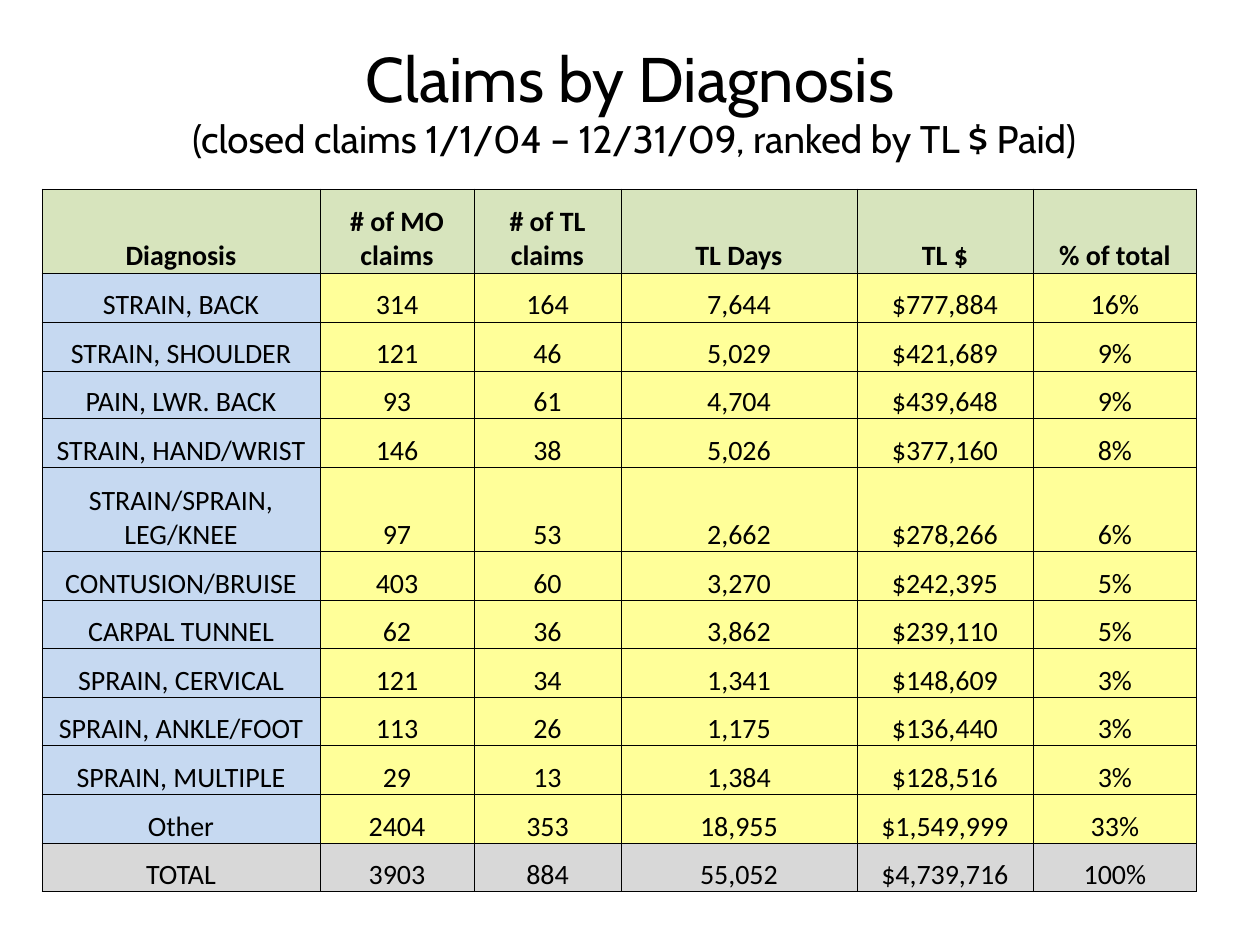
"""Build the slide with the table of claims by diagnosis."""
from dataclasses import dataclass
from itertools import pairwise

from lxml import etree
from pptx import Presentation
from pptx.dml.color import RGBColor
from pptx.enum import text
from pptx.oxml import ns
from pptx.util import Pt

PX = 914400 // 126


@dataclass(frozen=True)
class Theme:
    ink: str = "000000"
    header: str = "D7E4BD"
    diagnosis: str = "C6D9F1"
    figure: str = "FFFF99"
    total: str = "D8D8D8"
    title_font: str = "Cabin"
    table_font: str = "Calibri"
    title_size: int = 36
    subtitle_size: int = 22
    table_size: int = 16
    border: float = 0.5


theme = Theme()


def add_span(para, wording, font, size, bold=False):
    span = para.add_run()
    span.text = wording
    span.font.name = font
    span.font.size = Pt(size)
    span.font.bold = bold
    span.font.color.rgb = RGBColor.from_string(theme.ink)


def add_borders(cell):
    properties = cell._tc.get_or_add_tcPr()
    for side in ("a:lnL", "a:lnR", "a:lnT", "a:lnB"):
        line = etree.SubElement(properties, ns.qn(side), w=str(Pt(theme.border)))
        fill = etree.SubElement(line, ns.qn("a:solidFill"))
        etree.SubElement(fill, ns.qn("a:srgbClr"), val=theme.ink)


claims = [
    ("Diagnosis", "# of MO claims", "# of TL claims", "TL Days", "TL $", "% of total"),
    ("STRAIN, BACK", "314", "164", "7,644", "$777,884", "16%"),
    ("STRAIN, SHOULDER", "121", "46", "5,029", "$421,689", "9%"),
    ("PAIN, LWR. BACK", "93", "61", "4,704", "$439,648", "9%"),
    ("STRAIN, HAND/WRIST", "146", "38", "5,026", "$377,160", "8%"),
    ("STRAIN/SPRAIN, LEG/KNEE", "97", "53", "2,662", "$278,266", "6%"),
    ("CONTUSION/BRUISE", "403", "60", "3,270", "$242,395", "5%"),
    ("CARPAL TUNNEL", "62", "36", "3,862", "$239,110", "5%"),
    ("SPRAIN, CERVICAL", "121", "34", "1,341", "$148,609", "3%"),
    ("SPRAIN, ANKLE/FOOT", "113", "26", "1,175", "$136,440", "3%"),
    ("SPRAIN, MULTIPLE", "29", "13", "1,384", "$128,516", "3%"),
    ("Other", "2404", "353", "18,955", "$1,549,999", "33%"),
    ("TOTAL", "3903", "884", "55,052", "$4,739,716", "100%"),
]
column_edges = [42, 320, 474, 621, 857, 1033, 1197]
row_edges = [189, 273, 322, 371, 419, 468, 552, 601, 649, 698, 746, 795, 844, 892]

deck = Presentation()
deck.slide_width = 1260 * PX
deck.slide_height = 945 * PX
page = deck.slides.add_slide(deck.slide_layouts[5])

title = page.shapes.title
title.left, title.top, title.width, title.height = (n * PX for n in (63, 21, 1134, 158))
title.text_frame.auto_size = text.MSO_AUTO_SIZE.NONE
title.text_frame.vertical_anchor = text.MSO_ANCHOR.MIDDLE
heading = title.text_frame.paragraphs[0]
heading.alignment = text.PP_ALIGN.CENTER
add_span(heading, "Claims by Diagnosis", theme.title_font, theme.title_size)
heading.add_line_break()
add_span(heading, " (closed claims 1/1/04 – 12/31/09, ranked by TL $ Paid)",
         theme.title_font, theme.subtitle_size)

table = page.shapes.add_table(
    len(claims), len(claims[0]), column_edges[0] * PX, row_edges[0] * PX,
    (column_edges[-1] - column_edges[0]) * PX, (row_edges[-1] - row_edges[0]) * PX,
).table
table.first_row = False
table.horz_banding = False
for column, (left, right) in zip(table.columns, pairwise(column_edges)):
    column.width = (right - left) * PX
for row, (top, bottom) in zip(table.rows, pairwise(row_edges)):
    row.height = (bottom - top) * PX

band_fills = {0: theme.header, len(claims) - 1: theme.total}
for row_index, record in enumerate(claims):
    for column_index, wording in enumerate(record):
        cell = table.cell(row_index, column_index)
        cell.margin_left = cell.margin_right = cell.margin_top = cell.margin_bottom = 0
        cell.vertical_anchor = text.MSO_ANCHOR.BOTTOM
        add_borders(cell)
        body_fill = theme.figure if column_index else theme.diagnosis
        cell.fill.solid()
        cell.fill.fore_color.rgb = RGBColor.from_string(band_fills.get(row_index, body_fill))
        para = cell.text_frame.paragraphs[0]
        para.alignment = text.PP_ALIGN.CENTER
        add_span(para, wording, theme.table_font, theme.table_size, bold=row_index == 0)

deck.save("out.pptx")
